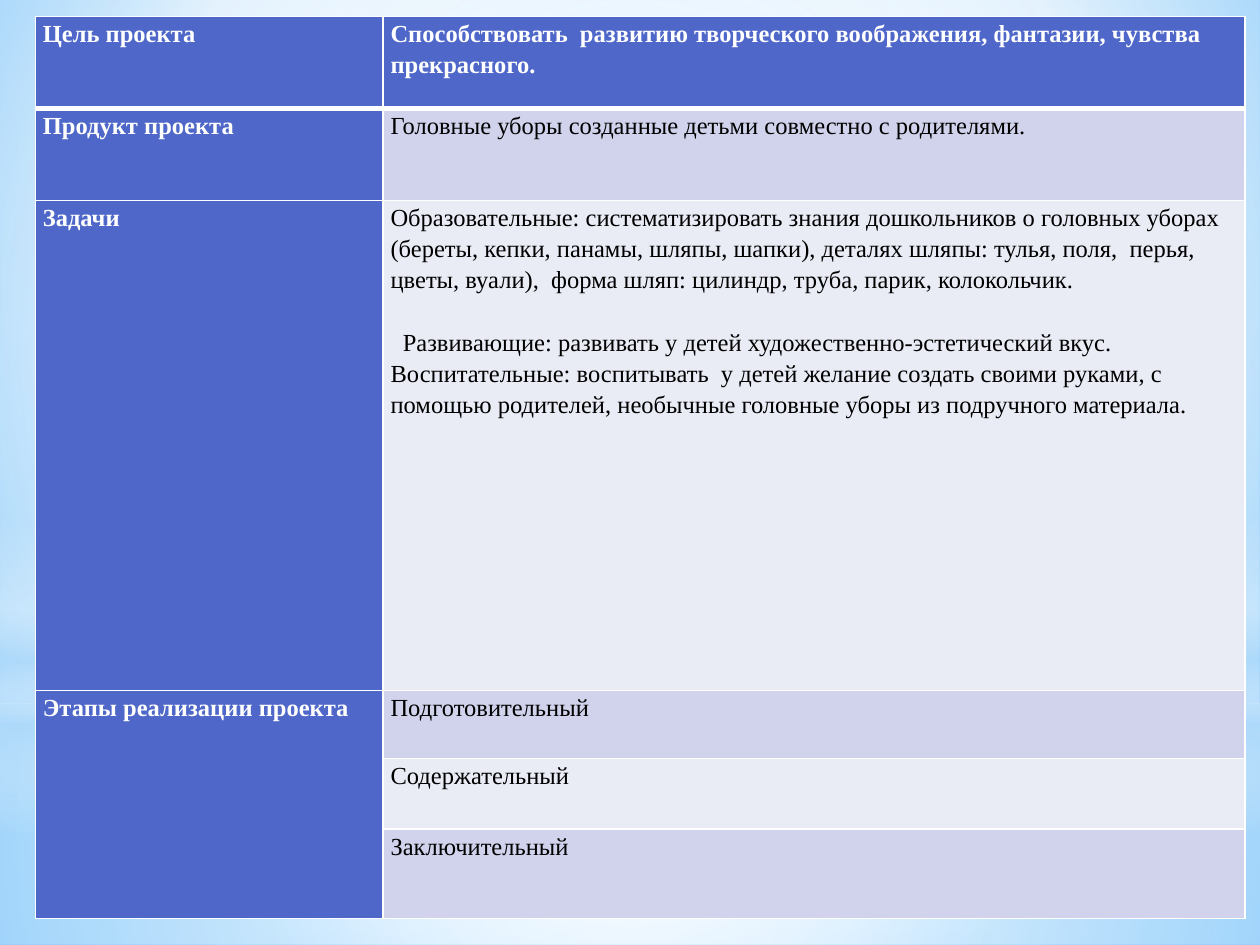
"""Build a project summary slide: a two-column table on a soft sky background."""
import pptx
import pptx.dml.color
import pptx.enum.shapes
import pptx.oxml
import pptx.oxml.ns
import pptx.util

Pt = pptx.util.Pt
Color = pptx.dml.color.RGBColor
Shape = pptx.enum.shapes.MSO_SHAPE

WHITE = Color(0xFF, 0xFF, 0xFF)
BLACK = Color(0, 0, 0)
INDIGO = Color(0x4E, 0x67, 0xC8)
LAVENDER = Color(0xD0, 0xD3, 0xEB)
PALE = Color(0xE9, 0xEB, 0xF5)
SKY = Color(0xB4, 0xDC, 0xFA)
LIGHT_BLUE = Color(0x9E, 0xD5, 0xFF)
BRIGHT_BLUE = Color(0x5B, 0xB9, 0xFF)

FONT = "Times New Roman"
CENTRE = (50, 50, 50, 50)
BACKDROP = ([(0, LIGHT_BLUE, 100), (60, WHITE, 100), (100, BRIGHT_BLUE, 100)], (20, 10, 20, 60))
GLOWS = [
    (Shape.RECTANGLE, 401.8, 138.2, [(0, WHITE, 91), (37, WHITE, 76), (100, SKY, 79)], CENTRE),
    (Shape.RECTANGLE, 0, 401.8, [(0, WHITE, 89), (48, WHITE, 62), (100, SKY, 79)], CENTRE),
    (Shape.RECTANGLE, 296.6, 180,
     [(0, WHITE, 0), (29, WHITE, 30), (45, SKY, 40), (55, WHITE, 26), (65, SKY, 60),
      (100, WHITE, 0)], None),
    (Shape.OVAL, 126, 401.8, [(0, WHITE, 100), (56, WHITE, 0)], CENTRE),
]
COLUMNS = [198.7, 492.5]
ROWS = [
    (52.6, "Цель проекта",
     ["Способствовать  развитию творческого воображения, фантазии, чувства прекрасного."]),
    (52.6, "Продукт проекта", ["Головные уборы созданные детьми совместно с родителями."]),
    (280.1, "Задачи", [
        "Образовательные: систематизировать знания дошкольников о головных уборах "
        "(береты, кепки, панамы, шляпы, шапки), деталях шляпы: тулья, поля,  перья, "
        "цветы, вуали),  форма шляп: цилиндр, труба, парик, колокольчик.",
        "Развивающие: развивать у детей художественно-эстетический вкус.",
        "Воспитательные: воспитывать  у детей желание создать своими руками, с помощью "
        "родителей, необычные головные уборы из подручного материала."]),
    (38.9, "Этапы реализации проекта", ["Подготовительный"]),
    (40.3, None, ["Содержательный"]),
    (51.1, None, ["Заключительный"]),
]
STAGES_START = 3
INDENTED = "Развивающие"


def paint_gradient(holder, stops, focus):
    marks = "".join(
        f'<a:gs pos="{place * 1000}"><a:srgbClr val="{color}">'
        f'<a:alpha val="{alpha * 1000}"/></a:srgbClr></a:gs>'
        for place, color, alpha in stops)
    if focus:
        sides = " ".join(f'{side}="{value * 1000}"' for side, value in zip("ltrb", focus))
        direction = f'<a:path path="circle"><a:fillToRect {sides}/></a:path>'
    else:
        direction = '<a:lin ang="5400000" scaled="0"/>'
    gradient = pptx.oxml.parse_xml(
        f'<a:gradFill {pptx.oxml.ns.nsdecls("a")} rotWithShape="1">'
        f'<a:gsLst>{marks}</a:gsLst>{direction}</a:gradFill>')
    solid = holder.find(pptx.oxml.ns.qn("a:solidFill"))
    holder.replace(solid, gradient)


def add_borders(cell, widths):
    properties = cell._tc.get_or_add_tcPr()
    for index, (side, width) in enumerate(zip("LRTB", widths)):
        properties.insert(index, pptx.oxml.parse_xml(
            f'<a:ln{side} {pptx.oxml.ns.nsdecls("a")} w="{Pt(width)}"><a:solidFill>'
            f'<a:srgbClr val="{WHITE}"/></a:solidFill></a:ln{side}>'))


def write_cell(cell, texts, color, bold):
    for index, text in enumerate(texts):
        frame = cell.text_frame
        para = frame.add_paragraph() if index else frame.paragraphs[0]
        para.line_spacing = 1.15
        if text.startswith(INDENTED):
            para.space_before = Pt(18)
            para._p.get_or_add_pPr().set("indent", str(Pt(7)))
        span = para.add_run()
        span.text = text
        span.font.name = FONT
        span.font.size = Pt(14)
        span.font.bold = bold
        span.font.color.rgb = color


def add_background(page):
    page.background.fill.solid()
    paint_gradient(page.element.xpath("./p:cSld/p:bg/p:bgPr")[0], *BACKDROP)
    for kind, top, height, stops, focus in GLOWS:
        glow = page.shapes.add_shape(kind, 0, Pt(top), Pt(720), Pt(height))
        glow.shadow.inherit = False
        glow.line.fill.background()
        glow.fill.solid()
        paint_gradient(glow._element.spPr, stops, focus)


def add_project_table(page):
    heights = [height for height, _, _ in ROWS]
    table = page.shapes.add_table(
        len(ROWS), len(COLUMNS), Pt(20.2), Pt(9.4), Pt(sum(COLUMNS)), Pt(sum(heights))).table
    table.first_row = table.horz_banding = False
    for column, width in zip(table.columns, COLUMNS):
        column.width = Pt(width)
    for index, (height, label, texts) in enumerate(ROWS):
        table.rows[index].height = Pt(height)
        band = LAVENDER if index % 2 else PALE
        heading, body = table.cell(index, 0), table.cell(index, 1)
        widths = (1, 1, 3 if index == 1 else 1, 3 if index == 0 else 1)
        for cell, fill in ((heading, INDIGO), (body, band if index else INDIGO)):
            cell.margin_left = cell.margin_right = Pt(4.3)
            cell.margin_top = cell.margin_bottom = 0
            cell.fill.solid()
            cell.fill.fore_color.rgb = fill
            add_borders(cell, widths)
        if label:
            write_cell(heading, [label], WHITE, True)
        write_cell(body, texts, BLACK if index else WHITE, index == 0)
    table.cell(STAGES_START, 0).merge(table.cell(len(ROWS) - 1, 0))


def main():
    deck = pptx.Presentation()
    deck.slide_width, deck.slide_height = Pt(720), Pt(540)
    page = deck.slides.add_slide(deck.slide_layouts[6])
    add_background(page)
    add_project_table(page)
    deck.save("out.pptx")


if __name__ == "__main__":
    main()
